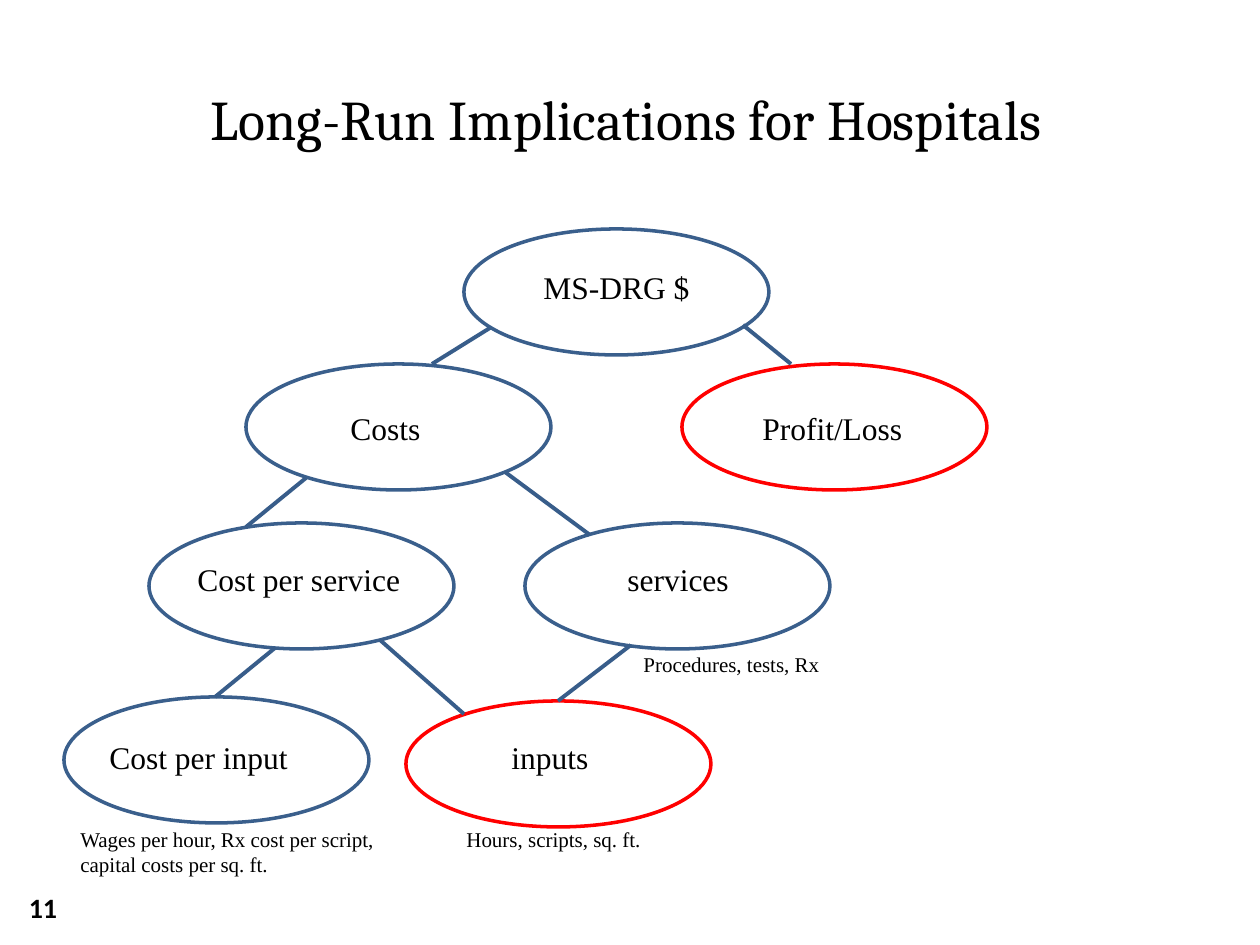
"""Build the slide showing long-run implications for hospitals as a cost tree."""
from dataclasses import dataclass

from lxml import etree
from pptx import Presentation
from pptx import util as u
from pptx.dml.color import RGBColor
from pptx.enum import shapes, text
from pptx.oxml import ns


@dataclass(frozen=True)
class Theme:
    ink: str = "000000"
    paper: str = "FFFFFF"
    node: str = "3A5F8C"
    accent: str = "FF0000"
    link: str = "385D8A"
    title_font: str = "Cambria"
    body_font: str = "Times New Roman"
    number_font: str = "Calibri"
    title_size: int = 32
    label_size: int = 18
    number_size: int = 16
    note_size: int = 12
    node_width: float = 2
    link_width: float = 2.25


THEME = Theme()
SCALE = u.Inches(1) // 126
SLIDE = (1260, 945)
NODE = (305, 126)

TITLE = ("Long-Run Implications for Hospitals ", (3, 59, 1259, 118))
NUMBER = ("11", (1, 882, 84, 50))
NODES = [
    ("Cost per input", (64, 697), (97, 732, 210, 50), THEME.node),
    ("inputs", (406, 701), (499, 732, 136, 50), THEME.accent),
    ("services", (525, 523), (615, 554, 210, 50), THEME.node),
    ("Cost per service", (149, 523), (185, 554, 231, 50), THEME.node),
    ("Profit/Loss", (682, 364), (750, 403, 175, 50), THEME.accent),
    ("Costs", (246, 364), (338, 403, 136, 53), THEME.node),
    ("MS-DRG $", (464, 229), (517, 262, 199, 50), THEME.node),
]
NOTES = [
    ("Procedures, tests, Rx", (631, 645, 222, 38)),
    ("Hours, scripts, sq. ft.", (454, 820, 244, 38)),
    ("Wages per hour, Rx cost per script, capital costs per sq. ft.", (68, 820, 355, 63)),
]
LINKS = [
    ((490, 328), (432, 364)),
    ((306, 478), (246, 527)),
    ((631, 645), (558, 701)),
    ((743, 325), (791, 364)),
    ((505, 472), (590, 535)),
    ((275, 648), (215, 697)),
    ((380, 640), (464, 714)),
]


def emu(*lengths):
    return [length * SCALE for length in lengths]


def color(code):
    return RGBColor.from_string(code)


def add_text(page, words, place, size=THEME.label_size, font=THEME.body_font,
             bold=False, align=text.PP_ALIGN.LEFT, anchor=text.MSO_ANCHOR.TOP):
    frame = page.shapes.add_textbox(*emu(*place)).text_frame
    frame.word_wrap = True
    frame.vertical_anchor = anchor
    para = frame.paragraphs[0]
    para.alignment = align
    span = para.add_run()
    span.text = words
    span.font.size = u.Pt(size)
    span.font.name = font
    span.font.bold = bold
    span.font.color.rgb = color(THEME.ink)


def add_node(page, corner, outline):
    oval = page.shapes.add_shape(shapes.MSO_SHAPE.OVAL, *emu(*corner, *NODE))
    oval.shadow.inherit = False
    oval.fill.solid()
    oval.fill.fore_color.rgb = color(THEME.paper)
    oval.line.color.rgb = color(outline)
    oval.line.width = u.Pt(THEME.node_width)


def add_link(page, start, end):
    link = page.shapes.add_connector(shapes.MSO_CONNECTOR.STRAIGHT, *emu(*start, *end))
    link.line.color.rgb = color(THEME.link)
    link.line.width = u.Pt(THEME.link_width)
    etree.SubElement(link._element.spPr, ns.qn("a:effectLst"))


def main():
    deck = Presentation()
    deck.slide_width, deck.slide_height = emu(*SLIDE)
    page = deck.slides.add_slide(deck.slide_layouts[6])
    center, middle = text.PP_ALIGN.CENTER, text.MSO_ANCHOR.MIDDLE

    for _, corner, _, outline in NODES:
        add_node(page, corner, outline)
    add_text(page, *TITLE, size=THEME.title_size, font=THEME.title_font,
             align=center, anchor=middle)
    add_text(page, *NUMBER, size=THEME.number_size, font=THEME.number_font,
             bold=True, align=center, anchor=middle)
    for words, _, place, _ in NODES:
        is_root = words == NODES[-1][0]
        add_text(page, words, place, align=center if is_root else text.PP_ALIGN.LEFT)
    for words, place in NOTES:
        add_text(page, words, place, size=THEME.note_size)
    for start, end in LINKS:
        add_link(page, start, end)
    deck.save("out.pptx")


if __name__ == "__main__":
    main()
